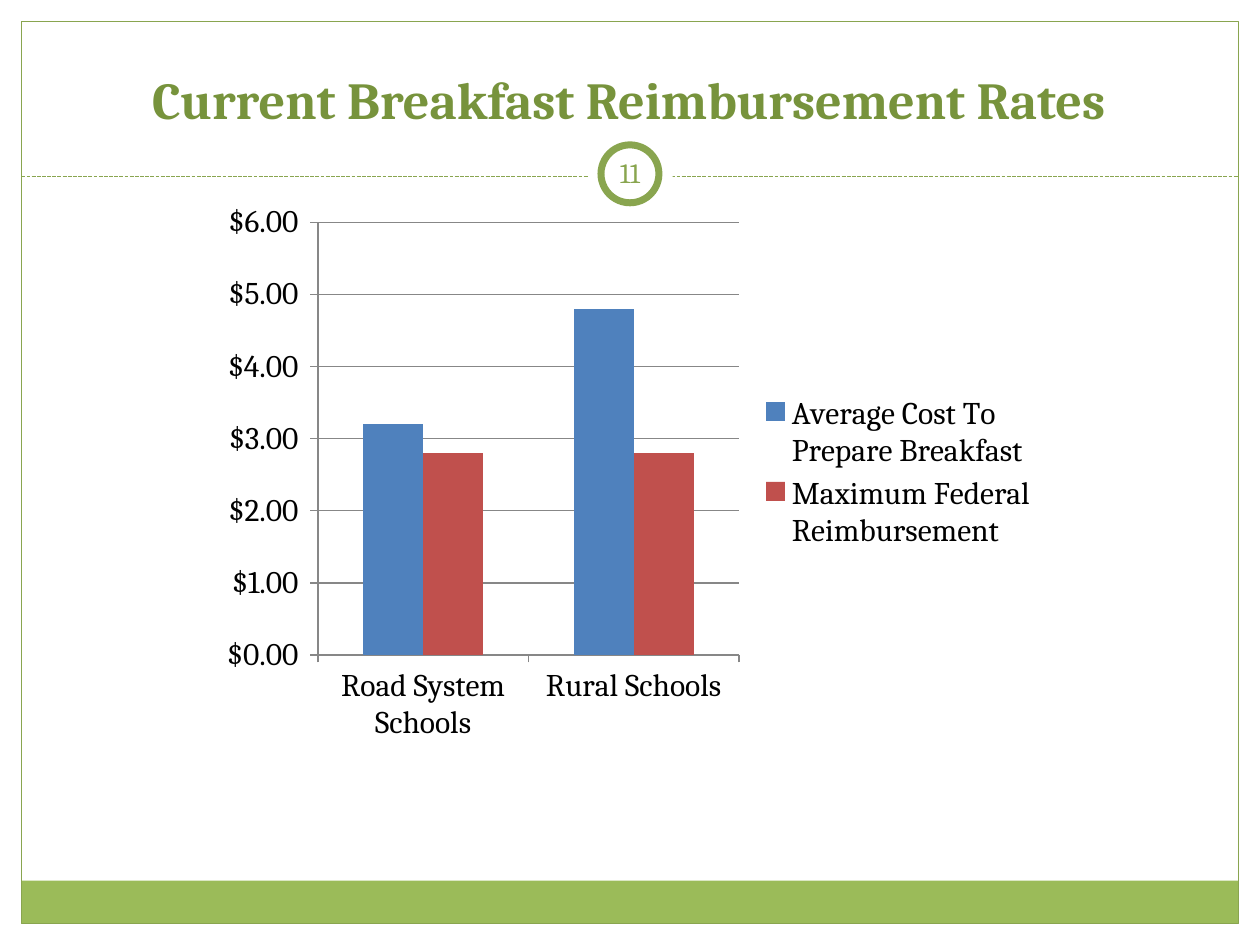
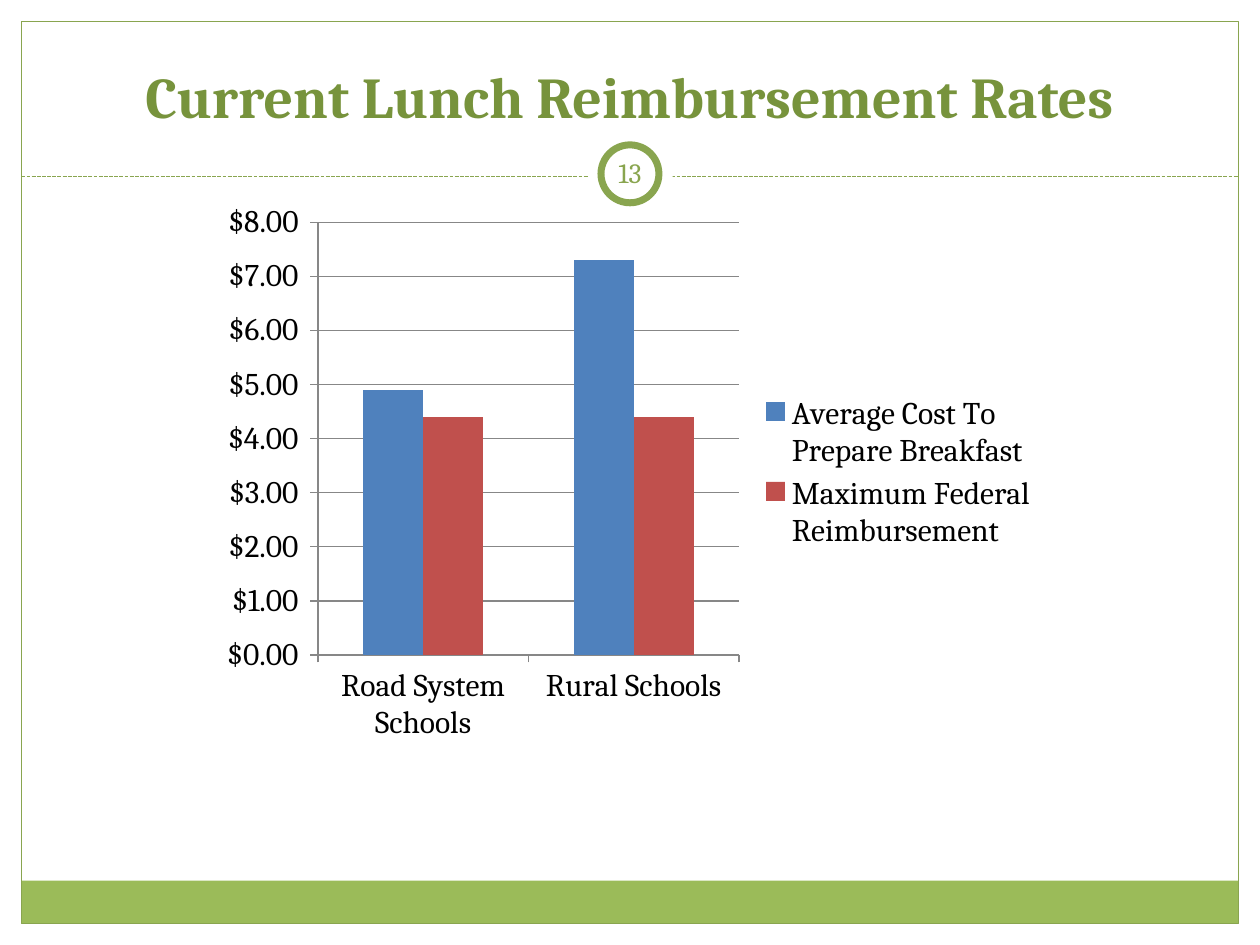
from pptx import Presentation
from pptx.chart.data import CategoryChartData
from pptx.dml.color import RGBColor
from pptx.enum.chart import XL_CHART_TYPE, XL_LEGEND_POSITION, XL_TICK_MARK
from pptx.enum.dml import MSO_LINE
from pptx.enum.shapes import MSO_CONNECTOR, MSO_SHAPE
from pptx.enum.text import MSO_ANCHOR, MSO_AUTO_SIZE, PP_ALIGN
from pptx.oxml.ns import qn
from pptx.util import Inches, Pt
from lxml.etree import SubElement

FONT = "Cambria"
WHITE, BAND, EDGE, HEAD = "FFFFFF", "9BBB59", "89A54F", "77933C"
GRID, TEXT = "878787", "000000"
MONEY = '"$"#,##0.00_);[Red]\\("$"#,##0.00\\)'
CATS = ["Road System Schools", "Rural Schools"]
NAMES = ["Average Cost To Prepare Breakfast", "Maximum Federal Reimbursement"]
HUES = ["4F81BD", "C0504D"]
PAGES = [
    ("Current Breakfast Reimbursement Rates", 29.7, "11", 6, [(3.2, 4.8), (2.8, 2.8)]),
    ("Current Lunch Reimbursement Rates", 33, "13", 8, [(4.9, 7.3), (4.4, 4.4)]),
]
RECT, OVAL = MSO_SHAPE.RECTANGLE, MSO_SHAPE.OVAL
FRAME = [
    (RECT, (0, 0, 10, 1.52), WHITE, None, 0),
    (RECT, (0, 0, 0.17, 7.5), WHITE, None, 0),
    (RECT, (9.83, 0, 0.17, 7.5), WHITE, None, 0),
    (RECT, (0.17, 6.99, 9.66, 0.34), BAND, None, 0),
    (RECT, (0.17, 0.17, 9.66, 7.16), None, EDGE, 0.75),
    (None, (0.17, 1.4, 9.83, 1.4), None, EDGE, 0.75),
    (OVAL, (4.67, 1.05, 0.67, 0.67), WHITE, None, 0),
    (OVAL, (4.77, 1.15, 0.46, 0.46), WHITE, EDGE, 4),
]


def paint(part, hue):
    if hue is None:
        part.background()
    else:
        part.solid()
        part.fore_color.rgb = RGBColor.from_string(hue)


def write(shape, text, anchor, size, hue, bold):
    frame = shape.text_frame
    frame.text = text
    style = {"word_wrap": True, "auto_size": MSO_AUTO_SIZE.NONE, "vertical_anchor": anchor}
    for key, value in style.items():
        setattr(frame, key, value)
    line = frame.paragraphs[0]
    line.alignment = PP_ALIGN.CENTER
    font = line.runs[0].font
    for key, value in {"name": FONT, "size": Pt(size), "bold": bold}.items():
        setattr(font, key, value)
    paint(font.fill, hue)


deck = Presentation()
deck.slide_width, deck.slide_height = Inches(10), Inches(7.5)
layout = deck.slide_layouts[5]
slides = [deck.slides.add_slide(layout) for page in PAGES]

for kind, box, fill, edge, width in FRAME:
    box = [Inches(n) for n in box]
    if kind is None:
        item = slides[0].shapes.add_connector(MSO_CONNECTOR.STRAIGHT, *box)
        item.line.dash_style = MSO_LINE.SQUARE_DOT
        SubElement(item.element.spPr, qn("a:effectLst"))
    else:
        item = slides[0].shapes.add_shape(kind, *box)
        item.shadow.inherit = False
        paint(item.fill, fill)
    paint(item.line.fill, edge)
    if edge:
        item.line.width = Pt(width)
    layout.shapes.element.append(item.element)

for slide, (head, size, number, top, rows) in zip(slides, PAGES):
    title = slide.shapes.title
    spot = {"left": 0.33, "top": 0.25, "width": 9.33, "height": 0.83}
    for key, value in spot.items():
        setattr(title, key, Inches(value))
    write(title, head, MSO_ANCHOR.BOTTOM, size, HEAD, True)

    data = CategoryChartData(number_format=MONEY)
    data.categories = CATS
    for name, row in zip(NAMES, rows):
        data.add_series(name, row)
    box = [Inches(n) for n in (1.67, 1.53, 6.67, 4.44)]
    chart = slide.shapes.add_chart(XL_CHART_TYPE.COLUMN_CLUSTERED, *box, data).chart
    chart.has_title = False
    chart.font.name, chart.font.size = FONT, Pt(18)
    paint(chart.font.fill, TEXT)
    chart.has_legend = True
    chart.legend.position = XL_LEGEND_POSITION.RIGHT
    chart.legend.include_in_layout = False

    plot = chart.plots[0]
    for key, value in {"gap_width": 150, "overlap": 0, "vary_by_categories": False}.items():
        setattr(plot, key, value)
    for bar, hue in zip(plot.series, HUES):
        paint(bar.format.fill, hue)
        bar.invert_if_negative = False

    scale = chart.value_axis
    for key, value in {"minimum_scale": 0, "maximum_scale": top, "major_unit": 1}.items():
        setattr(scale, key, value)
    scale.has_major_gridlines = True
    scale.tick_labels.number_format = MONEY
    scale.tick_labels.number_format_is_linked = False
    for axis in (scale, chart.category_axis):
        axis.major_tick_mark = XL_TICK_MARK.OUTSIDE
    for part in (scale, chart.category_axis, scale.major_gridlines):
        paint(part.format.line.fill, GRID)
        part.format.line.width = Pt(0.75)

    box = [Inches(n) for n in (4.75, 1.13, 0.5, 0.48)]
    badge = slide.shapes.add_textbox(*box)
    for side in ("left", "top", "right", "bottom"):
        setattr(badge.text_frame, "margin_" + side, Inches(0.05))
    write(badge, number, MSO_ANCHOR.MIDDLE, 16, EDGE, False)

deck.save("out.pptx")
